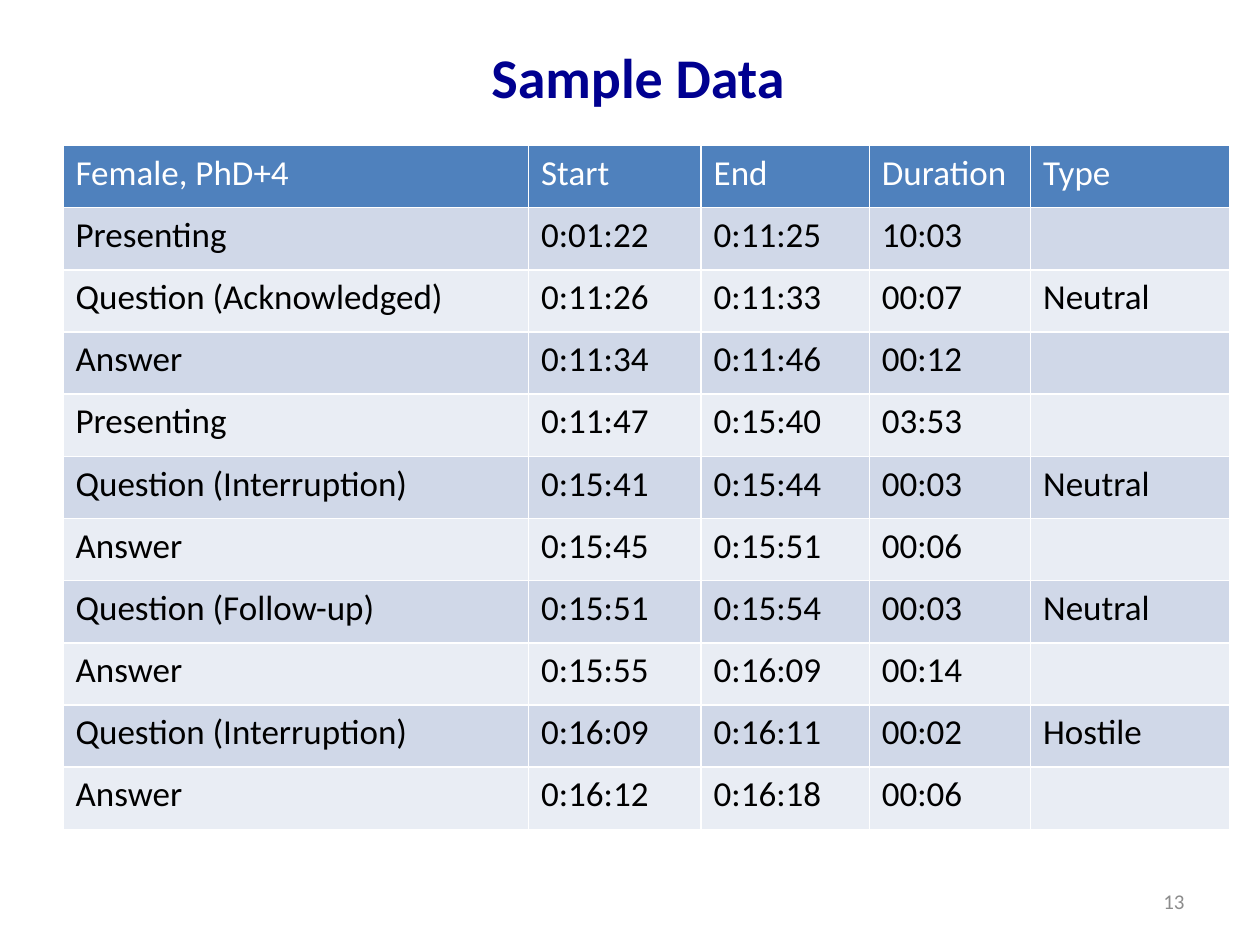
"""Build the sample data slide: a title, a timing table and a page number."""
from dataclasses import dataclass

import pptx
import pptx.dml.color
import pptx.enum.text
import pptx.util

RGBColor = pptx.dml.color.RGBColor
PP_ALIGN = pptx.enum.text.PP_ALIGN
MIDDLE = pptx.enum.text.MSO_ANCHOR.MIDDLE

NAVY = RGBColor(0x00, 0x00, 0x90)
GREY = RGBColor(0x8C, 0x8C, 0x8C)
WHITE = RGBColor(0xFF, 0xFF, 0xFF)
BLACK = RGBColor(0x00, 0x00, 0x00)
HEADER_FILL = RGBColor(0x4F, 0x81, 0xBD)
BAND_FILLS = (RGBColor(0xD0, 0xD8, 0xE8), RGBColor(0xE9, 0xED, 0xF4))

SLIDE_W = pptx.util.Inches(10)
SLIDE_H = pptx.util.Inches(7.5)
FONT = "Calibri"


@dataclass(frozen=True)
class Box:
    """A rectangle in percent of the slide's width and height."""
    left: float
    top: float
    width: float
    height: float

    def emu(self) -> tuple[int, int, int, int]:
        """Return left, top, width and height as lengths."""
        return (across(self.left), down(self.top),
                across(self.width), down(self.height))


@dataclass(frozen=True)
class Event:
    """One timed event of the talk."""
    activity: str
    start: str
    end: str
    duration: str
    kind: str = ""

    def values(self) -> tuple[str, ...]:
        """Return the event's cells in column order."""
        return self.activity, self.start, self.end, self.duration, self.kind


COLUMN_SHARES = (36.95, 13.7, 13.35, 12.8, 15.85)
ROW_SHARE = 6.58
HEADER = Event("Female, PhD+4", "Start", "End", "Duration", "Type")
EVENTS = (
    Event("Presenting", "0:01:22", "0:11:25", "10:03"),
    Event("Question (Acknowledged)", "0:11:26", "0:11:33", "00:07", "Neutral"),
    Event("Answer", "0:11:34", "0:11:46", "00:12"),
    Event("Presenting", "0:11:47", "0:15:40", "03:53"),
    Event("Question (Interruption)", "0:15:41", "0:15:44", "00:03", "Neutral"),
    Event("Answer", "0:15:45", "0:15:51", "00:06"),
    Event("Question (Follow-up)", "0:15:51", "0:15:54", "00:03", "Neutral"),
    Event("Answer", "0:15:55", "0:16:09", "00:14"),
    Event("Question (Interruption)", "0:16:09", "0:16:11", "00:02", "Hostile"),
    Event("Answer", "0:16:12", "0:16:18", "00:06"),
)


def across(percent: float) -> int:
    """Convert a percentage of the slide's width to a length."""
    return round(SLIDE_W * percent / 100)


def down(percent: float) -> int:
    """Convert a percentage of the slide's height to a length."""
    return round(SLIDE_H * percent / 100)


def write(tf, text: str, *, size: float, color: RGBColor,
          bold: bool = False, align=PP_ALIGN.LEFT) -> None:
    """Write one formatted paragraph into a text frame."""
    p = tf.paragraphs[0]
    p.alignment = align
    r = p.add_run()
    r.text = text
    r.font.name = FONT
    r.font.size = pptx.util.Pt(size)
    r.font.bold = bold
    r.font.color.rgb = color


def add_label(s, box: Box, text: str, **style) -> None:
    """Add a wrapped, vertically centred text box."""
    tf = s.shapes.add_textbox(*box.emu()).text_frame
    tf.word_wrap = True
    tf.vertical_anchor = MIDDLE
    write(tf, text, **style)


def fill_row(row, event: Event, fill: RGBColor, color: RGBColor) -> None:
    """Colour one table row and write its values."""
    row.height = down(ROW_SHARE)
    for cell, text in zip(row.cells, event.values()):
        cell.fill.solid()
        cell.fill.fore_color.rgb = fill
        if text:
            write(cell.text_frame, text, size=20, color=color)


def add_event_table(s, left: float, top: float) -> None:
    """Add the table with a header row and alternating bands."""
    count = len(EVENTS) + 1
    box = Box(left, top, sum(COLUMN_SHARES), ROW_SHARE * count)
    table = s.shapes.add_table(count, len(COLUMN_SHARES), *box.emu()).table
    for column, share in zip(table.columns, COLUMN_SHARES):
        column.width = across(share)
    fill_row(table.rows[0], HEADER, HEADER_FILL, WHITE)
    for i, event in enumerate(EVENTS):
        fill_row(table.rows[i + 1], event, BAND_FILLS[i % 2], BLACK)


def main() -> None:
    """Build and save the presentation."""
    prs = pptx.Presentation()
    prs.slide_width, prs.slide_height = SLIDE_W, SLIDE_H
    s = prs.slides.add_slide(prs.slide_layouts[6])
    add_label(s, Box(1.5, 2.27, 98.3, 11.6), "Sample Data",
              size=32, color=NAVY, bold=True, align=PP_ALIGN.CENTER)
    add_label(s, Box(71.67, 92.68, 23.33, 5.32), "13",
              size=12, color=GREY, align=PP_ALIGN.RIGHT)
    add_event_table(s, 5, 15.4)
    prs.save("out.pptx")


if __name__ == "__main__":
    main()
